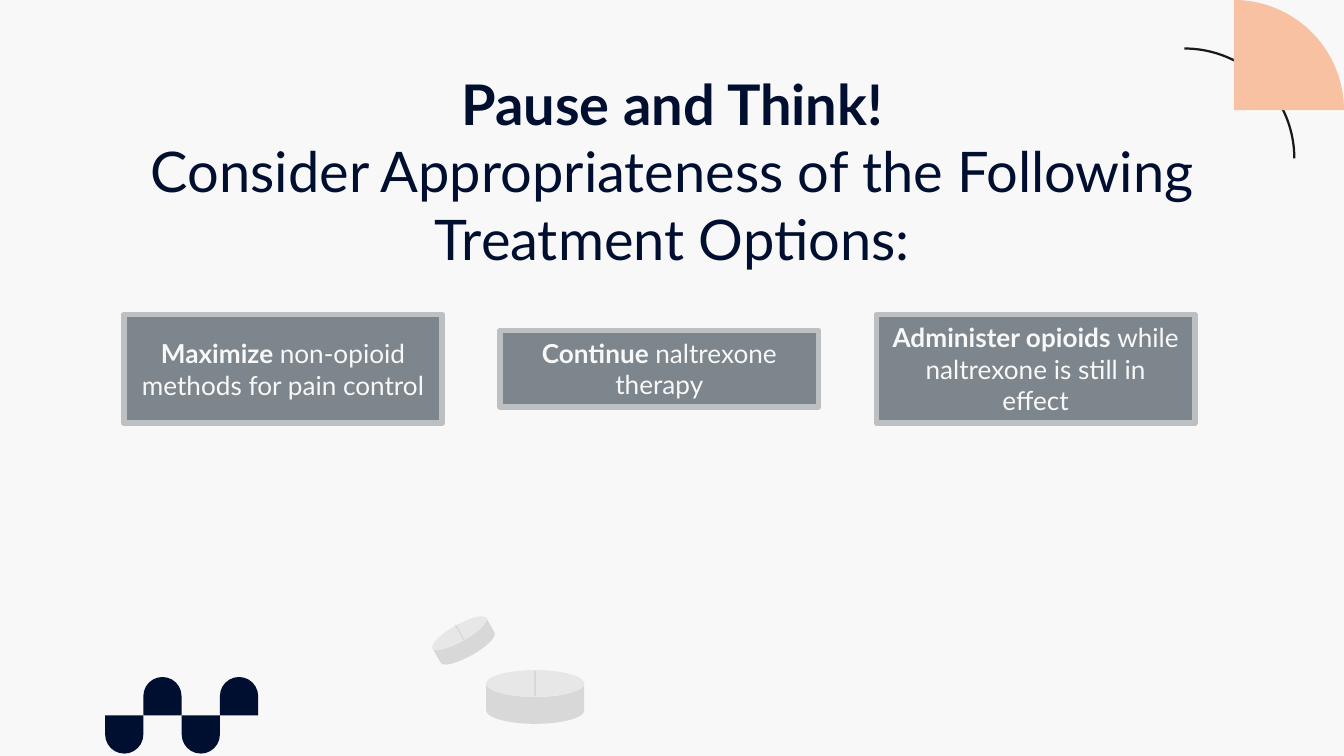
from dataclasses import dataclass
from math import cos, pi, sin

from lxml.etree import SubElement
from pptx import Presentation
from pptx.dml.color import RGBColor
from pptx.enum.shapes import MSO_CONNECTOR, MSO_SHAPE
from pptx.enum.text import MSO_ANCHOR, MSO_AUTO_SIZE, PP_ALIGN
from pptx.oxml.ns import qn
from pptx.util import Pt


@dataclass(frozen=True)
class Theme:
    paper: RGBColor = RGBColor.from_string("F8F8F8")
    navy: RGBColor = RGBColor.from_string("000E2F")
    peach: RGBColor = RGBColor.from_string("F8C1A2")
    black: RGBColor = RGBColor.from_string("191919")
    card: RGBColor = RGBColor.from_string("7D868C")
    card_edge: RGBColor = RGBColor.from_string("BCC0C3")
    pill: RGBColor = RGBColor.from_string("D8D8D8")
    font: str = "Lato"
    title_size: int = 30
    card_size: int = 14


THEME = Theme()
OPTIONS = [
    ("Maximize ", "non-opioid methods for pain control", 58.3),
    ("Continue ", "naltrexone therapy", 41),
    ("Administer opioids ", "while naltrexone is still in effect", 58.3),
]


def paint(shape, color):
    shape.shadow.inherit = False
    shape.fill.solid()
    shape.fill.fore_color.rgb = color
    shape.line.fill.background()


def add_block(page, kind, box, color):
    block = page.shapes.add_shape(kind, *map(Pt, box))
    paint(block, color)
    return block


def write_spans(para, parts, size, color):
    """Fill a centred paragraph with (text, bold) parts."""
    para.alignment = PP_ALIGN.CENTER
    for text, bold in parts:
        span = para.add_run()
        span.text = text
        span.font.name = THEME.font
        span.font.size = Pt(size)
        span.font.bold = bold
        span.font.color.rgb = color


def add_quarter(page, left, top, outer, inner, color):
    """Upper right quarter of a disc, or of a ring when inner is above zero."""
    steps = 40
    angles = [pi / 2 * step / steps for step in range(steps + 1)]
    points = [
        (Pt(left + radius * sin(angle)), Pt(top + outer - radius * cos(angle)))
        for radius, sweep in ((outer, angles), (inner, angles[::-1]))
        for angle in sweep
    ]
    builder = page.shapes.build_freeform(*points[0], scale=1.0)
    builder.add_line_segments(points[1:], close=True)
    paint(builder.convert_to_shape(), color)


def add_corner(page, left, top):
    add_quarter(page, left, top + 25.4, 59.5, 58.3, THEME.black)
    add_quarter(page, left + 26.5, top, 59, 0, THEME.peach)


def add_wave(page, left, top, tile):
    """Four half-rounded tiles, alternately hanging and standing."""
    for index in range(4):
        hanging = index % 2 == 0
        box = (left + index * tile, top + tile * hanging, tile, tile)
        arch = add_block(page, MSO_SHAPE.ROUND_2_SAME_RECTANGLE, box, THEME.navy)
        arch.adjustments[0] = 0.5
        arch.rotation = 180 if hanging else 0


def add_pill(page, box, rotation, score):
    pill = add_block(page, MSO_SHAPE.CAN, box, THEME.pill)
    pill.adjustments[0] = 0.665
    pill.rotation = rotation
    line = page.shapes.add_connector(MSO_CONNECTOR.STRAIGHT, *map(Pt, score))
    line.line.color.rgb = THEME.pill
    line.line.width = Pt(0.75)
    SubElement(line.element.spPr, qn("a:effectLst"))


def add_title(page, box):
    title = page.shapes.add_textbox(*map(Pt, box))
    frame = title.text_frame
    frame.word_wrap = True
    frame.margin_left = frame.margin_right = Pt(7.2)
    frame.margin_top = frame.margin_bottom = Pt(7.2)
    para = frame.paragraphs[0]
    write_spans(para, [("Pause and Think!", True)], THEME.title_size, THEME.navy)
    para.add_line_break()
    question = "Consider Appropriateness of the Following Treatment Options:"
    write_spans(para, [(question, False)], THEME.title_size, THEME.navy)


def add_options(page, left, middle, width, pitch):
    """Cards in a row, centred on one horizontal line."""
    for index, (lead, rest, height) in enumerate(OPTIONS):
        box = (left + index * pitch, middle - height / 2, width, height)
        card = add_block(page, MSO_SHAPE.RECTANGLE, box, THEME.card)
        card.line.color.rgb = THEME.card_edge
        card.line.width = Pt(3)
        frame = card.text_frame
        frame.word_wrap = True
        frame.auto_size = MSO_AUTO_SIZE.SHAPE_TO_FIT_TEXT
        frame.vertical_anchor = MSO_ANCHOR.MIDDLE
        parts = [(lead, True), (rest, False)]
        write_spans(frame.paragraphs[0], parts, THEME.card_size, THEME.paper)


def main():
    deck = Presentation()
    deck.slide_width, deck.slide_height = Pt(720), Pt(405)
    page = deck.slides.add_slide(deck.slide_layouts[6])
    page.background.fill.solid()
    page.background.fill.fore_color.rgb = THEME.paper

    # Decoration
    add_corner(page, left=634.5, top=0)
    add_wave(page, left=56.3, top=362.7, tile=20.5)
    add_pill(page, (260.5, 359, 52.5, 28.8), 0, (286.6, 373, 286.6, 359.3))
    add_pill(page, (231.8, 334.1, 33.1, 18), 330.7, (248.4, 342.7, 244.1, 334.8))

    # Content
    add_options(page, left=66.3, middle=197.6, width=170.7, pitch=201.6)
    add_title(page, (51.8, 30.2, 617, 111.6))
    deck.save("out.pptx")


if __name__ == "__main__":
    main()
